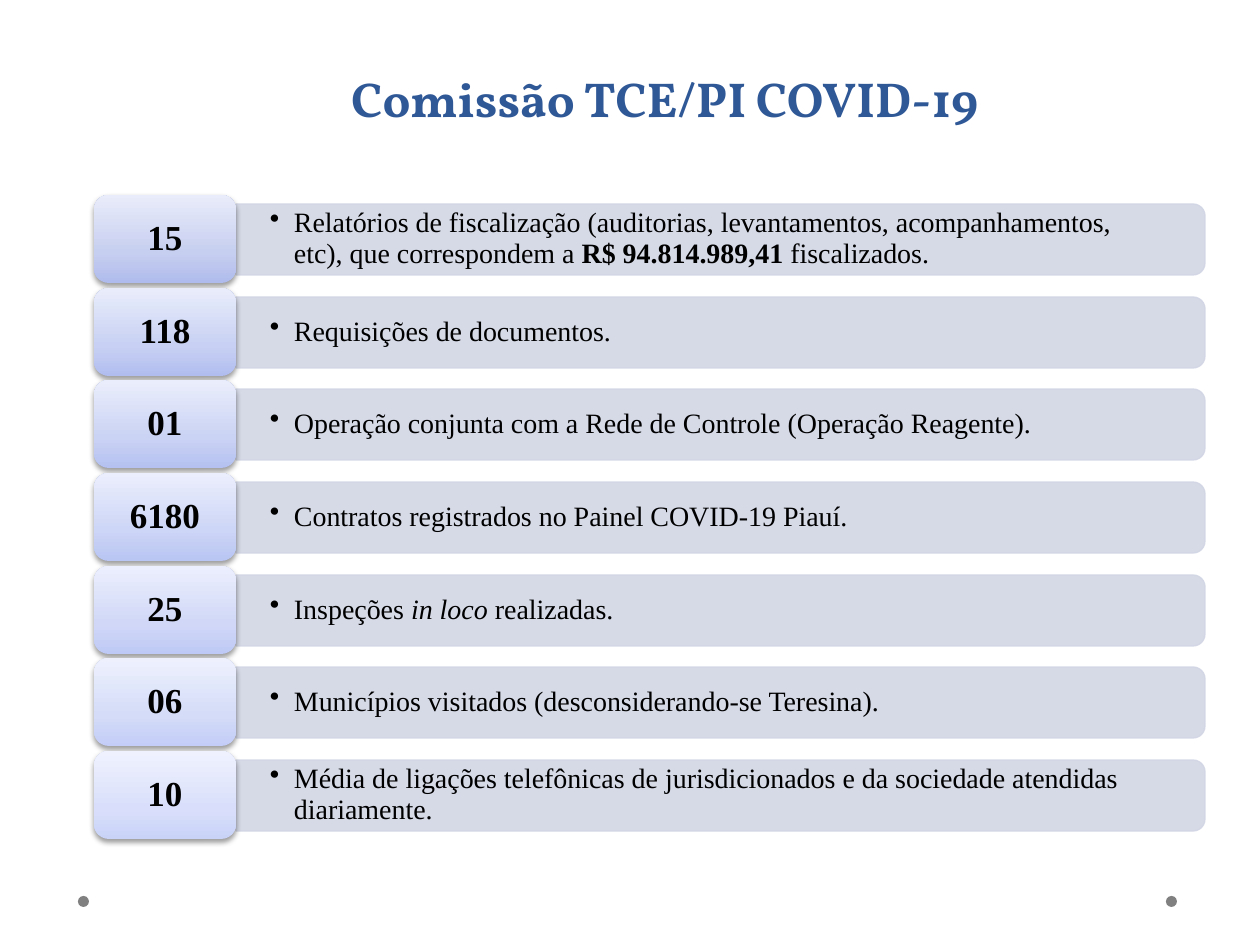
from lxml import etree
from pptx import Presentation, util as u
from pptx.dml import color
from pptx.enum import shapes, text
from pptx.oxml import ns

ROWS = [
    ("15", [("Relatórios de fiscalização (auditorias, levantamentos, "
             "acompanhamentos, etc), que correspondem a ", ""),
            ("R$ 94.814.989,41", "b"), (" fiscalizados.", "")],
     ("AFBBEC", "C7CFF0", "E9ECFA")),
    ("118", [("Requisições de documentos.", "")],
     ("B1BDEF", "C8D1F3", "E9EDFB")),
    ("01", [("Operação conjunta com a Rede de Controle (Operação Reagente).", "")],
     ("B4C1F1", "CBD3F4", "EAEEFC")),
    ("6180", [("Contratos registrados no Painel COVID-19 Piauí.", "")],
     ("B9C5F3", "CDD6F6", "EBEEFC")),
    ("25", [("Inspeções ", ""), ("in loco", "i"), (" realizadas.", "")],
     ("BEC9F5", "D1D8F7", "ECEFFD")),
    ("06", [("Municípios visitados (desconsiderando-se Teresina).", "")],
     ("C3CDF7", "D4DCF8", "EEF1FD")),
    ("10", [("Média de ligações telefônicas de jurisdicionados e da sociedade "
             "atendidas diariamente.", "")],
     ("C9D3F8", "D9DFFA", "EFF2FE")),
]
TOP, SPAN = 195, 556


def px(n):
    return u.Emu(round(n * 914400 / 126))


def rgb(code):
    return color.RGBColor.from_string(code)


def add(node, tag, **attrs):
    return etree.SubElement(node, ns.qn(tag), {k: str(v) for k, v in attrs.items()})


class Deck:
    face = "Times New Roman"
    ink = "000000"
    tint = "D2D6E5"
    blue = "2F5897"
    gray = "808080"

    def __init__(self):
        self.prs = Presentation()
        self.prs.slide_width, self.prs.slide_height = px(1260), px(945)
        self.slide = self.prs.slides.add_slide(self.prs.slide_layouts[6])

    def shape(self, kind, x, y, w, h):
        item = self.slide.shapes.add_shape(kind, px(x), px(y), px(w), px(h))
        item.shadow.inherit = False
        item.line.fill.background()
        return item

    def frame(self, item, side, edge, anchor):
        body = item.text_frame
        body.word_wrap = True
        body.margin_left = body.margin_right = px(side)
        body.margin_top = body.margin_bottom = px(edge)
        body.vertical_anchor = anchor
        return body.paragraphs[0]

    def run(self, para, words, size, style="", face=None, ink=None):
        run = para.add_run()
        run.text = words
        font = run.font
        font.name, font.size = face or self.face, u.Pt(size)
        font.bold, font.italic = "b" in style, "i" in style
        font.color.rgb = rgb(ink or self.ink)

    def box(self, x, y, w, h, side, edge, anchor):
        item = self.slide.shapes.add_textbox(px(x), px(y), px(w), px(h))
        return self.frame(item, side, edge, anchor)

    def dot(self, x, y, size):
        item = self.shape(shapes.MSO_SHAPE.OVAL, x, y, size, size)
        item.fill.solid()
        item.fill.fore_color.rgb = rgb(self.gray)

    def title(self, words, x, y, w, h):
        para = self.box(x, y, w, h, 12, 6, text.MSO_ANCHOR.BOTTOM)
        para.alignment = text.PP_ALIGN.CENTER
        para.line_spacing = u.Pt(58)
        self.run(para, words, 28, "b", "Vollkorn", self.blue)

    def bar(self, x, y, w, h):
        item = self.shape(shapes.MSO_SHAPE.ROUND_2_SAME_RECTANGLE,
                          x + (w - h) / 2, y - (w - h) / 2, h, w)
        item.rotation = 90
        item.line.width = u.Pt(0.75)
        for fill in (item.fill, item.line.fill):
            fill.solid()
            fill.fore_color.rgb = rgb(self.tint)
        for node in item._element.spPr.iter(ns.qn("a:srgbClr")):
            add(node, "a:alpha", val=90000)

    def note(self, runs, x, y, w, h):
        para = self.box(x, y, w, h, 34, 18, text.MSO_ANCHOR.MIDDLE)
        para.line_spacing = 0.9
        prop = para._p.get_or_add_pPr()
        prop.set("marL", str(px(24)))
        prop.set("indent", str(px(-24)))
        add(prop, "a:buChar", char="•")
        for words, style in runs:
            self.run(para, words, 16, style)

    def badge(self, words, tones, x, y, w, h):
        item = self.shape(shapes.MSO_SHAPE.ROUNDED_RECTANGLE, x, y, w, h)
        item.fill.gradient()
        prop = item._element.spPr
        grad = prop.find(ns.qn("a:gradFill"))
        for node in list(grad):
            grad.remove(node)
        stops = add(grad, "a:gsLst")
        for pos, tone in zip((0, 35000, 100000), tones):
            add(add(stops, "a:gs", pos=pos), "a:srgbClr", val=tone)
        add(grad, "a:lin", ang=16200000, scaled=1)
        glow = add(prop.find(ns.qn("a:effectLst")), "a:outerShdw",
                   blurRad=u.Pt(3.1), dist=u.Pt(1.6), dir=5400000, rotWithShape=0)
        add(add(glow, "a:srgbClr", val=self.ink), "a:alpha", val=38000)
        para = self.frame(item, 10, 5, text.MSO_ANCHOR.MIDDLE)
        para.alignment = text.PP_ALIGN.CENTER
        para.line_spacing = 0.9
        self.run(para, words, 20, "b")


def main():
    deck = Deck()
    for x in (1166, 78):
        deck.dot(x, 896, 11)
    deck.title("Comissão TCE/PI COVID-19", 233, 16, 863, 117)
    for i, (count, runs, tones) in enumerate(ROWS):
        y = TOP + round(i * SPAN / (len(ROWS) - 1))
        deck.bar(236, y + 9, 969, 71)
        deck.note(runs, 236, y + 12, 965, 64)
        deck.badge(count, tones, 94, y, 142, 88)
    deck.prs.save("out.pptx")


if __name__ == "__main__":
    main()
